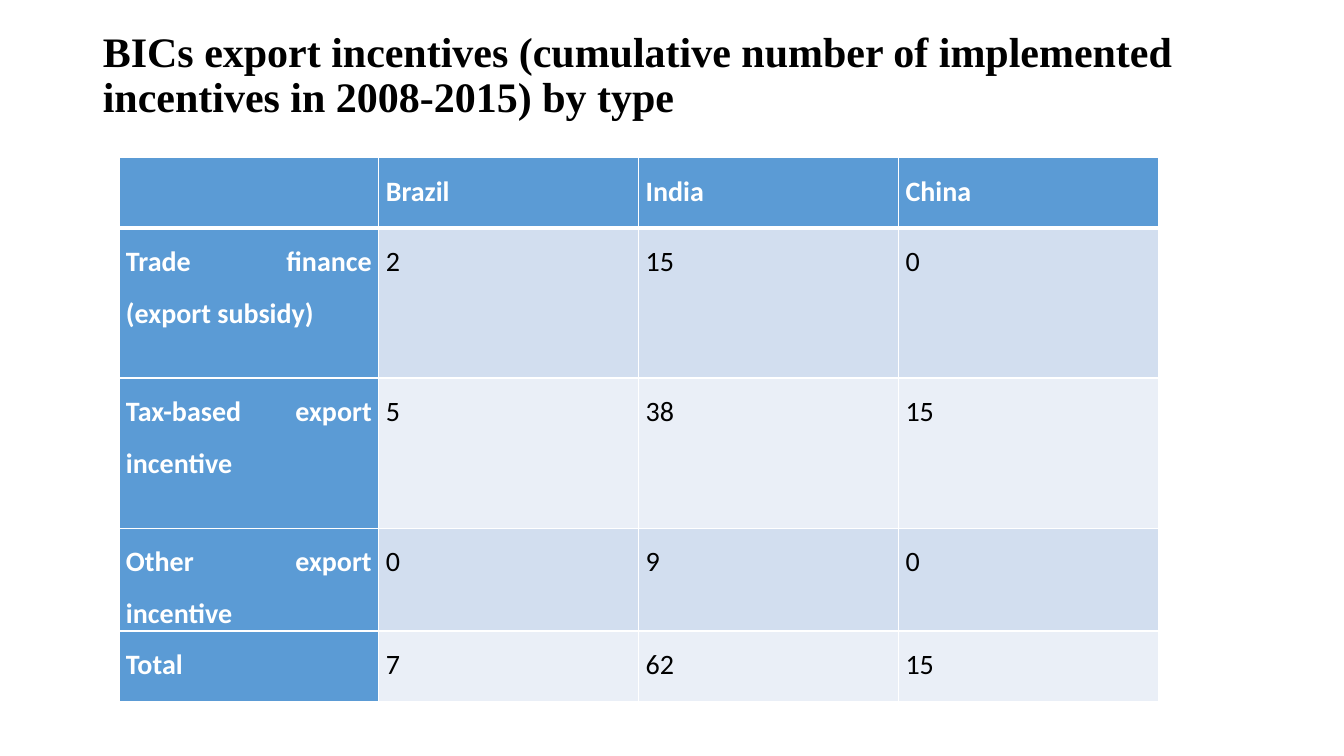
from dataclasses import dataclass

from lxml.etree import SubElement
from pptx import Presentation
from pptx.dml.color import RGBColor
from pptx.enum.text import MSO_ANCHOR, MSO_AUTO_SIZE, PP_ALIGN
from pptx.oxml.ns import qn
from pptx.util import Inches, Pt


@dataclass(frozen=True)
class Theme:
    heading_font: str = "Times New Roman"
    body_font: str = "Calibri"
    heading_size: int = 30
    body_size: int = 20
    ink: str = "000000"
    white: str = "FFFFFF"
    header: str = "5B9BD5"
    bands: tuple = ("D2DEEF", "EAEFF7")


theme = Theme()


def write(frame, text, *, font, size, color, bold, align, spacing):
    frame.word_wrap = True
    paragraph = frame.paragraphs[0]
    paragraph.alignment = align
    paragraph.line_spacing = spacing
    run = paragraph.add_run()
    run.text = text
    run.font.name = font
    run.font.size = Pt(size)
    run.font.bold = bold
    run.font.color.rgb = RGBColor.from_string(color)


def draw_borders(cell, **widths):
    """Rule the cell in white; widths are points keyed by side: L, R, T, B."""
    properties = cell._tc.get_or_add_tcPr()
    for side, width in widths.items():
        line = SubElement(properties, qn(f"a:ln{side}"), w=str(Pt(width)))
        fill = SubElement(line, qn("a:solidFill"))
        SubElement(fill, qn("a:srgbClr"), val=theme.white)


prs = Presentation()
prs.slide_width, prs.slide_height = Inches(13.33), Inches(7.5)
slide = prs.slides.add_slide(prs.slide_layouts[5])

title = slide.shapes.title
title.left, title.top = Inches(0.92), Inches(0.4)
title.width, title.height = Inches(11.5), Inches(1.17)
heading = title.text_frame
heading.auto_size = MSO_AUTO_SIZE.NONE
heading.vertical_anchor = MSO_ANCHOR.MIDDLE
heading.margin_bottom = Inches(0.51)
write(heading,
      "BICs export incentives (cumulative number of implemented incentives in 2008-2015) by type",
      font=theme.heading_font, size=theme.heading_size, color=theme.ink,
      bold=True, align=PP_ALIGN.LEFT, spacing=0.9)

incentives = [
    ("", "Brazil", "India", "China"),
    ("Trade finance (export subsidy)", "2", "15", "0"),
    ("Tax-based export incentive", "5", "38", "15"),
    ("Other export incentive", "0", "9", "0"),
    ("Total", "7", "62", "15"),
]
row_heights = [0.7, 1.49, 1.49, 1.02, 0.7]

table = slide.shapes.add_table(
    len(incentives), len(incentives[0]),
    Inches(1.18), Inches(1.56), Inches(10.31), Inches(sum(row_heights))).table
table.horz_banding = False
table.first_col = True
for row, height in zip(table.rows, row_heights):
    row.height = Inches(height)

for r, values in enumerate(incentives):
    for c, value in enumerate(values):
        cell = table.cell(r, c)
        is_header = r == 0 or c == 0
        draw_borders(cell, L=1, R=1, T=3 if r == 1 else 1, B=3 if r == 0 else 1)
        cell.fill.solid()
        cell.fill.fore_color.rgb = RGBColor.from_string(
            theme.header if is_header else theme.bands[(r - 1) % 2])
        cell.margin_left = cell.margin_right = Inches(0.07)
        cell.margin_top = cell.margin_bottom = 0
        if value:
            write(cell.text_frame, value, font=theme.body_font, size=theme.body_size,
                  color=theme.white if is_header else theme.ink, bold=is_header,
                  align=PP_ALIGN.JUSTIFY, spacing=1.5)

prs.save("out.pptx")
